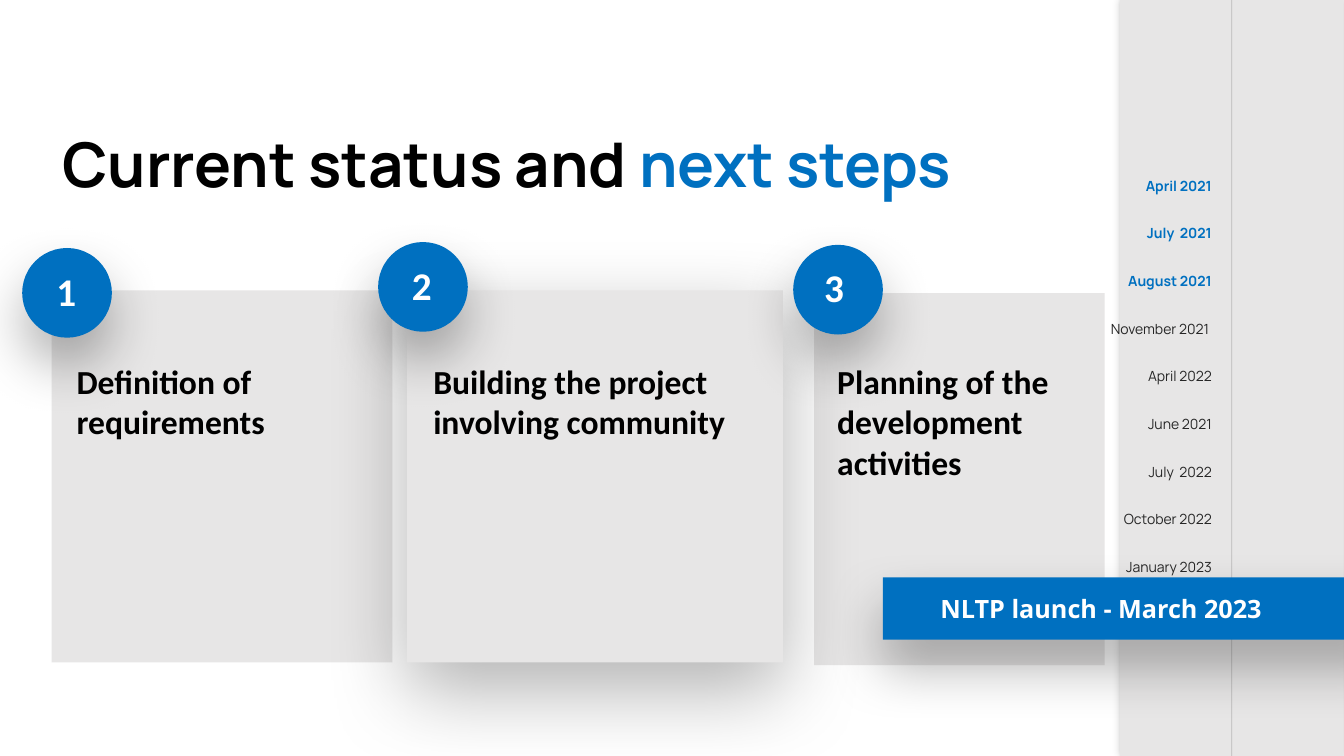
from lxml import etree
from pptx import Presentation
from pptx import util as u
from pptx.dml.color import RGBColor
from pptx.enum import shapes, text
from pptx.oxml.ns import qn

COLORS = {"blue": "0070C0", "gray": "E7E6E6", "black": "000000",
          "dark": "262626", "white": "FFFFFF"}
WIDTH, HEIGHT = 33.87, 19.05
SOFT_SHADOW = (30, 40, 20)  # opacity in percent, blur and distance in points


class SlideBuilder:
    """Holds the style and the current slide; lengths are in centimetres."""

    def __init__(self, presentation):
        self.slide = presentation.slides.add_slide(presentation.slide_layouts[6])

    @staticmethod
    def color(name):
        return RGBColor.from_string(COLORS[name])

    @staticmethod
    def add_alpha(color_element, percent):
        etree.SubElement(color_element, qn("a:alpha")).set("val", str(percent * 1000))

    def add_shadow(self, shape, opacity, blur, distance):
        effects = shape._element.spPr.find(qn("a:effectLst"))
        shadow = etree.SubElement(effects, qn("a:outerShdw"), {
            "blurRad": str(u.Pt(blur)), "dist": str(u.Pt(distance)),
            "dir": "5400000", "algn": "t", "rotWithShape": "0"})
        color = etree.SubElement(shadow, qn("a:srgbClr"), val=COLORS["black"])
        self.add_alpha(color, opacity)

    def add_block(self, kind, box, fill, shadow=None):
        shape = self.slide.shapes.add_shape(kind, *map(u.Cm, box))
        shape.fill.solid()
        shape.fill.fore_color.rgb = self.color(fill)
        shape.line.fill.background()
        shape.shadow.inherit = False
        if shadow:
            self.add_shadow(shape, *shadow)
        return shape

    def add_line(self, start, end, color, width, opacity):
        ends = map(u.Cm, (*start, *end))
        line = self.slide.shapes.add_connector(shapes.MSO_CONNECTOR.STRAIGHT, *ends)
        line.line.width = u.Pt(width)
        line.line.color.rgb = self.color(color)
        properties = line._element.spPr
        self.add_alpha(next(properties.iter(qn("a:srgbClr"))), opacity)
        etree.SubElement(properties, qn("a:effectLst"))

    def format_run(self, run, font, size, color, bold=True):
        run.font.name, run.font.size, run.font.bold = font, u.Pt(size), bold
        run.font.color.rgb = self.color(color)

    def set_margins(self, frame, *margins):
        (frame.margin_left, frame.margin_top,
         frame.margin_right, frame.margin_bottom) = map(u.Cm, margins)

    def add_text(self, box, content, size, color):
        frame = self.slide.shapes.add_textbox(*map(u.Cm, box)).text_frame
        frame.word_wrap = True
        frame.auto_size = text.MSO_AUTO_SIZE.SHAPE_TO_FIT_TEXT
        frame.text = content
        paragraph = frame.paragraphs[0]
        paragraph.space_after = u.Pt(12)
        self.format_run(paragraph.runs[0], "Calibri", size, color)

    def add_title(self, box, parts):
        frame = self.slide.shapes.add_textbox(*map(u.Cm, box)).text_frame
        frame.word_wrap = True
        frame.vertical_anchor = text.MSO_ANCHOR.MIDDLE
        paragraph = frame.paragraphs[0]
        paragraph.line_spacing = 0.9
        for content, color in parts:
            run = paragraph.add_run()
            run.text = content
            self.format_run(run, "Manrope", 44, color)

    def add_banner(self, box, content):
        banner = self.add_block(shapes.MSO_SHAPE.RECTANGLE, box, "blue", SOFT_SHADOW)
        frame = banner.text_frame
        self.set_margins(frame, 0.79, 0.13, 3.2, 0.13)
        frame.vertical_anchor = text.MSO_ANCHOR.MIDDLE
        frame.text = content
        paragraph = frame.paragraphs[0]
        paragraph.alignment = text.PP_ALIGN.RIGHT
        self.format_run(paragraph.runs[0], "Open Sans", 18, "white")

    def add_dates(self, box, dates, done):
        frame = self.slide.shapes.add_textbox(*map(u.Cm, box)).text_frame
        frame.word_wrap = False
        frame.auto_size = text.MSO_AUTO_SIZE.SHAPE_TO_FIT_TEXT
        self.set_margins(frame, 0, 0.1, 0.61, 0.1)
        frame.text = "\n".join(dates)
        for index, paragraph in enumerate(frame.paragraphs):
            paragraph.alignment = text.PP_ALIGN.RIGHT
            paragraph.line_spacing = 2.0
            if index:
                paragraph.space_before = u.Pt(10)
            past = index < done
            self.format_run(paragraph.runs[0], "Manrope", 10,
                            "blue" if past else "dark", past)


def main():
    presentation = Presentation()
    presentation.slide_width, presentation.slide_height = u.Cm(WIDTH), u.Cm(HEIGHT)
    builder = SlideBuilder(presentation)
    rectangle, oval = shapes.MSO_SHAPE.RECTANGLE, shapes.MSO_SHAPE.OVAL

    # Cards and timeline panel; the raised middle card lies on top
    builder.add_block(rectangle, (1.3, 7.32, 8.59, 9.37), "gray")
    builder.add_block(rectangle, (20.52, 7.39, 7.32, 9.37), "gray")
    builder.add_block(rectangle, (28.22, 0, 5.64, HEIGHT), "gray", (20, 5, 0))
    builder.add_block(rectangle, (10.26, 7.32, 9.47, 9.37), "gray", (30, 60, 20))
    builder.add_line((31.04, 0), (31.04, HEIGHT), "black", 0.5, 20)

    # Launch banner and timeline dates
    builder.add_banner((22.25, 14.55, 12.75, 1.57), "NLTP launch - March 2023")
    builder.add_dates((27.97, 3.94, 3.18, 10.62), [
        "April 2021", "July  2021", "August 2021", "November 2021 ", "April 2022",
        "June 2021", "July  2022", "October 2022", "January 2023"], done=3)

    # Title
    builder.add_title((1.32, 2.39, 23.65, 3.68),
                      [("Current status and ", "black"), ("next steps", "blue")])

    # Steps: badge left and top, number left, caption left and width, caption
    steps = [
        (0.56, 6.25, 1.17, 1.68, 7.82, "Definition of requirements"),
        (9.53, 6.1, 10.13, 10.67, 8.76, "Building the project involving community"),
        (19.99, 6.17, 20.52, 20.85, 6.88, "Planning of the development activities"),
    ]
    for number, step in enumerate(steps, 1):
        badge_left, top, number_left, caption_left, caption_width, caption = step
        builder.add_block(oval, (badge_left, top, 2.26, 2.26), "blue", SOFT_SHADOW)
        builder.add_text((number_left, top + 0.35, 1.24, 3.68), str(number), 28, "white")
        builder.add_text((caption_left, 8.97, caption_width, 3.33), caption, 24, "black")

    presentation.save("out.pptx")


if __name__ == "__main__":
    main()
